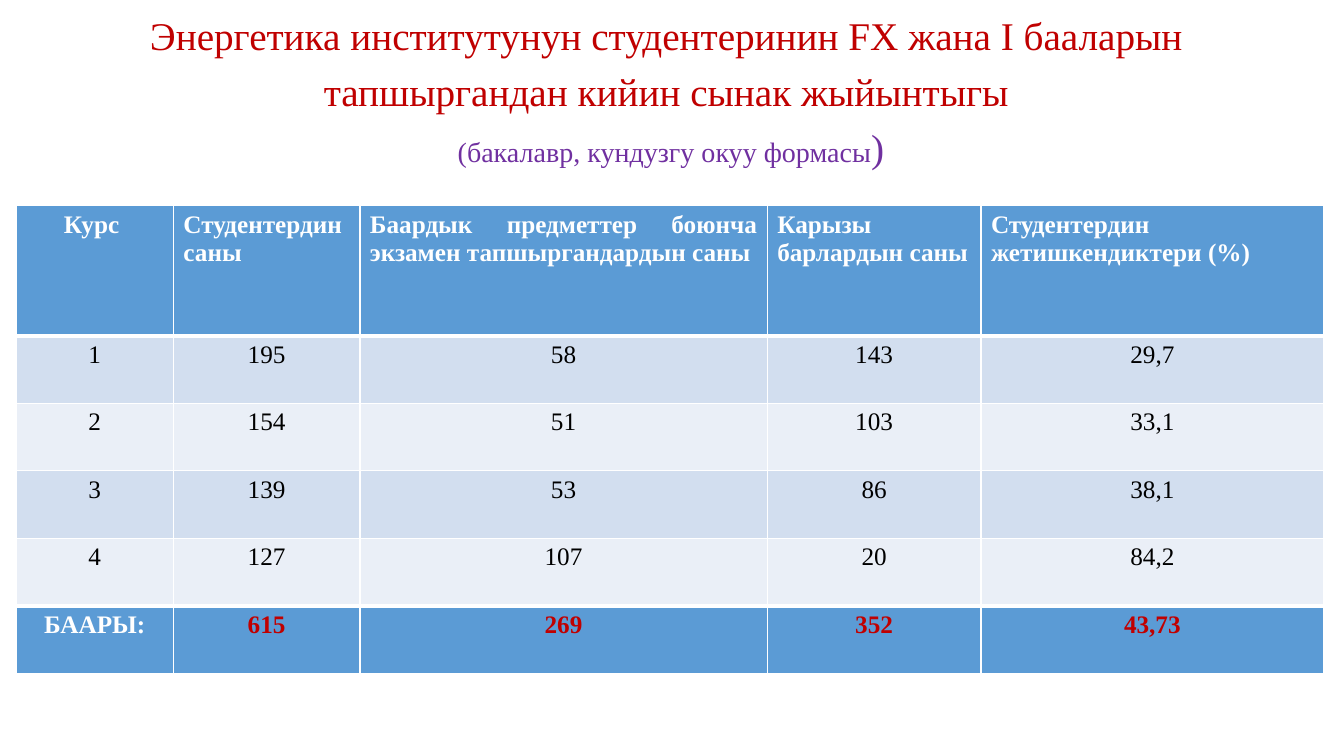
from dataclasses import dataclass

from lxml.etree import SubElement
from pptx import Presentation
from pptx.dml.color import RGBColor
from pptx.enum.text import MSO_ANCHOR, MSO_AUTO_SIZE, PP_ALIGN
from pptx.oxml.ns import qn
from pptx.slide import Slide
from pptx.table import _Cell
from pptx.util import Emu, Pt

PX = 9144  # EMU per px, 100 px to the inch


@dataclass(frozen=True)
class Theme:
    font: str = "Times New Roman"
    red: str = "C00000"
    purple: str = "7030A0"
    white: str = "FFFFFF"
    black: str = "000000"
    blue: str = "5B9BD5"
    bands: tuple[str, str] = ("D2DEEF", "EAEFF7")
    title_size: int = 28
    note_size: int = 20
    table_size: int = 18


@dataclass(frozen=True)
class TitleRun:
    text: str
    size: int
    color: str


@dataclass(frozen=True)
class CellStyle:
    fill: str
    color: str
    bold: bool = False
    align: PP_ALIGN = PP_ALIGN.CENTER
    top: int = 1
    bottom: int = 1


THEME = Theme()

TITLE = [
    [TitleRun("Энергетика институтунун студенттеринин FX жана I бааларын ".replace("студентт", "студент"),
              THEME.title_size, THEME.red)],
    [TitleRun("тапшыргандан кийин сынак жыйынтыгы ", THEME.title_size, THEME.red)],
    [TitleRun("(бакалавр, кундузгу окуу формасы", THEME.note_size, THEME.purple),
     TitleRun(")", THEME.title_size, THEME.purple)],
]

ROWS = [
    ["Курс ", "Студентердин саны",
     "Баардык предметтер боюнча экзамен тапшыргандардын саны",
     "Карызы барлардын саны", "Студентердин жетишкендиктери (%)"],
    ["1", "195", "58", "143", "29,7"],
    ["2", "154", "51", "103", "33,1"],
    ["3", "139", "53", "86", "38,1"],
    ["4", "127", "107", "20", "84,2"],
    ["БААРЫ:", "615", "269", "352", "43,73"],
]
COLUMN_WIDTHS = [156, 185, 404, 212, 340]
HEADER_HEIGHT, ROW_HEIGHT = 129, 67


def px(n: int) -> Emu:
    return Emu(n * PX)


def rgb(color: str) -> RGBColor:
    return RGBColor.from_string(color)


def add_title(s: Slide) -> None:
    sp = s.shapes.title
    sp.left, sp.top, sp.width, sp.height = px(7), px(11), px(1317), px(171)
    tf = sp.text_frame
    tf.word_wrap = True
    tf.auto_size = MSO_AUTO_SIZE.NONE
    tf.vertical_anchor = MSO_ANCHOR.TOP
    for i, runs in enumerate(TITLE):
        p = tf.add_paragraph() if i else tf.paragraphs[0]
        p.alignment = PP_ALIGN.CENTER
        p.line_spacing = 0.9
        p.space_before = Pt(10)
        p.font.name = THEME.font
        for run in runs:
            r = p.add_run()
            r.text = run.text
            r.font.size = Pt(run.size)
            r.font.color.rgb = rgb(run.color)


def cell_style(row: int, col: int) -> CellStyle:
    last = len(ROWS) - 1
    if row == 0:
        align = PP_ALIGN.JUSTIFY if col else PP_ALIGN.CENTER
        return CellStyle(THEME.blue, THEME.white, True, align, bottom=3)
    if row == last:
        return CellStyle(THEME.blue, THEME.red if col else THEME.white, True, top=3)
    return CellStyle(THEME.bands[(row - 1) % 2], THEME.black,
                     top=3 if row == 1 else 1, bottom=3 if row == last - 1 else 1)


def set_borders(cell: _Cell, style: CellStyle) -> None:
    tc_pr = cell._tc.get_or_add_tcPr()
    for side, width in (("L", 1), ("R", 1), ("T", style.top), ("B", style.bottom)):
        ln = SubElement(tc_pr, qn(f"a:ln{side}"), w=str(Pt(width)))
        fill = SubElement(ln, qn("a:solidFill"))
        SubElement(fill, qn("a:srgbClr"), val=THEME.white)


def fill_cell(cell: _Cell, text: str, style: CellStyle) -> None:
    set_borders(cell, style)
    cell.fill.solid()
    cell.fill.fore_color.rgb = rgb(style.fill)
    p = cell.text_frame.paragraphs[0]
    p.alignment = style.align
    p.font.name = THEME.font
    p.font.size = Pt(THEME.table_size)
    p.font.bold = style.bold
    p.font.color.rgb = rgb(style.color)
    p.add_run().text = text


def add_results(s: Slide) -> None:
    heights = [HEADER_HEIGHT] + [ROW_HEIGHT] * (len(ROWS) - 1)
    table = s.shapes.add_table(len(ROWS), len(COLUMN_WIDTHS), px(16), px(204),
                               px(sum(COLUMN_WIDTHS)), px(sum(heights))).table
    for column, width in zip(table.columns, COLUMN_WIDTHS):
        column.width = px(width)
    for row, height in zip(table.rows, heights):
        row.height = px(height)
    for i, texts in enumerate(ROWS):
        for j, text in enumerate(texts):
            fill_cell(table.cell(i, j), text, cell_style(i, j))


def main() -> None:
    prs = Presentation()
    prs.slide_width, prs.slide_height = px(1333), px(750)
    s = prs.slides.add_slide(prs.slide_layouts[5])  # title only
    add_title(s)
    add_results(s)
    prs.save("out.pptx")


if __name__ == "__main__":
    main()
